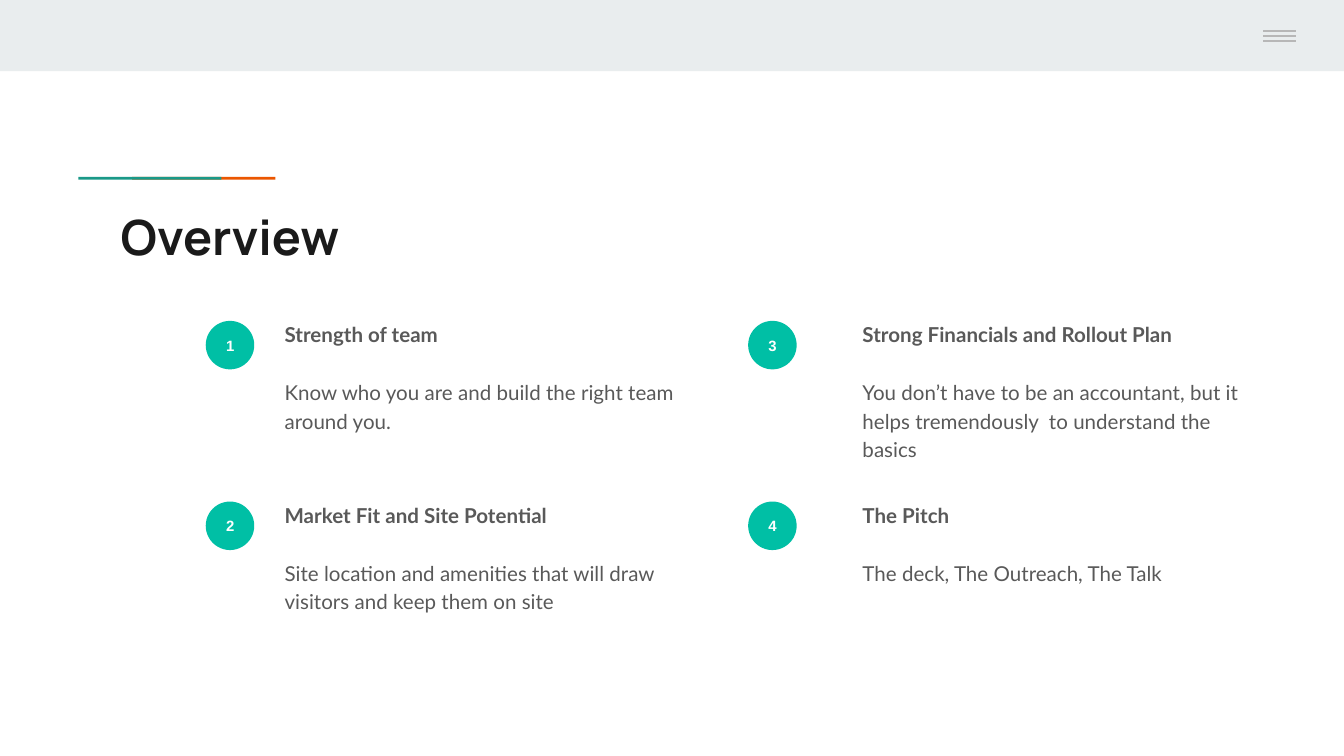
from dataclasses import dataclass

from lxml import etree
from pptx import Presentation
from pptx.dml.color import RGBColor
from pptx.enum.shapes import MSO_CONNECTOR, MSO_SHAPE
from pptx.enum.text import MSO_ANCHOR, PP_ALIGN
from pptx.oxml.ns import qn
from pptx.util import Pt

RECTANGLE = MSO_SHAPE.RECTANGLE
OVAL = MSO_SHAPE.OVAL
STRAIGHT = MSO_CONNECTOR.STRAIGHT
TOP = MSO_ANCHOR.TOP
MIDDLE = MSO_ANCHOR.MIDDLE
LEFT = PP_ALIGN.LEFT
CENTER = PP_ALIGN.CENTER


@dataclass(frozen=True)
class Theme:
    band: str = "E9EDEE"
    menu: str = "B7B7B7"
    orange: str = "EB5600"
    green: str = "1A9988"
    badge: str = "00BFA5"
    title: str = "1A1A1A"
    body: str = "595959"
    white: str = "FFFFFF"
    title_font: str = "Manrope"
    body_font: str = "Lato"
    badge_font: str = "Arial"
    title_size: float = 26
    body_size: float = 11
    badge_size: float = 8


THEME = Theme()

TOPICS = [
    ("Strength of team", "Know who you are and build the right team around you."),
    ("Market Fit and Site Potential",
     "Site location and amenities that will draw visitors and keep them on site"),
    ("Strong Financials and Rollout Plan",
     "You don’t have to be an accountant, but it helps tremendously  to understand the basics"),
    ("The Pitch", "The deck, The Outreach, The Talk"),
]


def add_filled(page, kind, left, top, width, height, color):
    shape = page.shapes.add_shape(kind, Pt(left), Pt(top), Pt(width), Pt(height))
    shape.shadow.inherit = False
    shape.fill.solid()
    shape.fill.fore_color.rgb = RGBColor.from_string(color)
    shape.line.fill.background()
    return shape


def add_text_box(page, left, top, width, height):
    return page.shapes.add_textbox(Pt(left), Pt(top), Pt(width), Pt(height))


def set_frame(shape, anchor):
    frame = shape.text_frame
    frame.word_wrap = True
    frame.vertical_anchor = anchor
    frame.margin_left = frame.margin_right = Pt(7.2)
    frame.margin_top = frame.margin_bottom = Pt(7.2)
    return frame


def write(para, text, font, size, color, bold=True, align=LEFT):
    para.text = text
    para.alignment = align
    for span in para.runs:
        span.font.name = font
        span.font.size = Pt(size)
        span.font.bold = bold
        span.font.color.rgb = RGBColor.from_string(color)


def add_header(page, left, top, width, height):
    add_filled(page, RECTANGLE, left, top, width, height, THEME.band)
    menu_left = left + width - 43.2
    for index in range(3):
        y = top + 16.7 + index * 2.65
        line = page.shapes.add_connector(
            STRAIGHT, Pt(menu_left), Pt(y), Pt(menu_left + 17.3), Pt(y))
        line.line.color.rgb = RGBColor.from_string(THEME.menu)
        line.line.width = Pt(0.75)
        properties = line._element.find(qn("p:spPr"))
        etree.SubElement(properties, qn("a:effectLst"))


def add_title(page, left, top, width, height):
    for offset, color in ((28.8, THEME.orange), (0, THEME.green)):
        add_filled(page, RECTANGLE, left + offset, top, 76.7, 1.5, color)
    box = add_text_box(page, left + 15.6, top + 9, width - 15.6, height - 9)
    frame = set_frame(box, TOP)
    write(frame.paragraphs[0], "Overview", THEME.title_font, THEME.title_size, THEME.title)


def add_topic(page, left, top, width, height, number, heading, detail, text_offset):
    badge = add_filled(page, OVAL, left, top + 8.5, 26, 26, THEME.badge)
    write(set_frame(badge, MIDDLE).paragraphs[0], str(number),
          THEME.badge_font, THEME.badge_size, THEME.white, align=CENTER)
    box = add_text_box(page, left + text_offset, top, width - text_offset, height)
    frame = set_frame(box, TOP)
    heading_para = frame.paragraphs[0]
    detail_para = frame.add_paragraph()
    write(heading_para, heading, THEME.body_font, THEME.body_size, THEME.body)
    write(detail_para, detail, THEME.body_font, THEME.body_size, THEME.body, bold=False)
    heading_para.line_spacing = detail_para.line_spacing = 1.15
    detail_para.space_before = detail_para.space_after = Pt(16)


def add_topics(page, left, top, height):
    row_step = height - 82.8
    columns = ((left, 35.2), (left + 290.6, 54.2))
    for index, (heading, detail) in enumerate(TOPICS):
        column, row = divmod(index, 2)
        column_left, text_offset = columns[column]
        add_topic(page, column_left, top + row * row_step, text_offset + 223.2, 82.8,
                  index + 1, heading, detail, text_offset)


def main():
    deck = Presentation()
    deck.slide_width = Pt(720)
    deck.slide_height = Pt(405)
    page = deck.slides.add_slide(deck.slide_layouts[6])
    add_header(page, 0, 0, 720, 38.2)
    add_title(page, 42, 94.7, 621.1, 51.5)
    add_topics(page, 110.2, 163.4, 179.6)
    deck.save("out.pptx")


if __name__ == "__main__":
    main()
